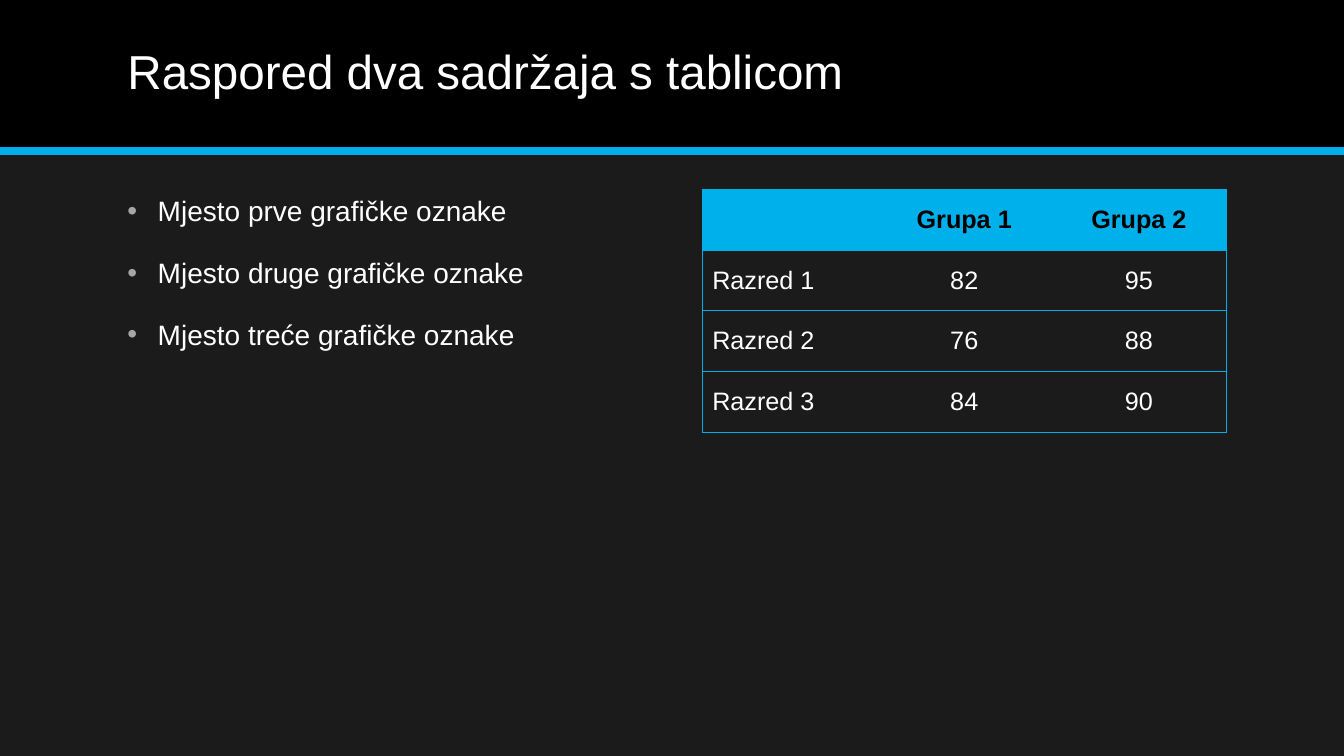
"""Build a dark two-content slide with a bullet list and a table of class results."""
from lxml.etree import SubElement
from pptx import Presentation
from pptx.dml.color import RGBColor
from pptx.enum.shapes import MSO_CONNECTOR, MSO_SHAPE
from pptx.enum.text import MSO_ANCHOR, PP_ALIGN
from pptx.oxml.ns import qn
from pptx.util import Pt

COLORS = {"background": "1B1B1B", "band": "000000", "accent": "00B0EA",
          "text": "FFFFFF", "header": "000000", "bullet": "A6A6A6"}
BULLETS = ["Mjesto prve grafičke oznake", "Mjesto druge grafičke oznake",
           "Mjesto treće grafičke oznake"]
ROWS = [["", "Grupa 1", "Grupa 2"],
        ["Razred 1", "82", "95"],
        ["Razred 2", "76", "88"],
        ["Razred 3", "84", "90"]]


def color(name):
    return RGBColor.from_string(COLORS[name])


def write(paragraph, text, size, color_name, bold=False):
    run = paragraph.add_run()
    run.text = text
    for attribute, value in {"name": "Arial", "size": Pt(size), "bold": bold}.items():
        setattr(run.font, attribute, value)
    run.font.color.rgb = color(color_name)


presentation = Presentation()
presentation.slide_width, presentation.slide_height = Pt(960), Pt(540)
slide = presentation.slides.add_slide(presentation.slide_layouts[6])
slide.background.fill.solid()
slide.background.fill.fore_color.rgb = color("background")

band = slide.shapes.add_shape(MSO_SHAPE.RECTANGLE, 0, 0, Pt(960), Pt(108))
band.shadow.inherit = False
band.fill.solid()
band.fill.fore_color.rgb = color("band")
band.line.fill.background()

rule = slide.shapes.add_connector(MSO_CONNECTOR.STRAIGHT, 0, Pt(108), Pt(960), Pt(108))
rule.line.color.rgb = color("accent")
rule.line.width = Pt(6)
SubElement(rule.element.spPr, qn("a:effectLst"))

title = slide.shapes.add_textbox(Pt(84), Pt(10), Pt(792), Pt(86.4)).text_frame
title.word_wrap = True
title.vertical_anchor = MSO_ANCHOR.MIDDLE
title.paragraphs[0].line_spacing = 0.9
write(title.paragraphs[0], "Raspored dva sadržaja s tablicom", 34, "text")

body = slide.shapes.add_textbox(Pt(84), Pt(135), Pt(374.4), Pt(351)).text_frame
body.word_wrap = True
for index, text in enumerate(BULLETS):
    paragraph = body.add_paragraph() if index else body.paragraphs[0]
    paragraph.space_before = Pt(20)
    write(paragraph, text, 20, "text")
    properties = paragraph._p.get_or_add_pPr()
    properties.set("marL", str(Pt(21.6)))
    properties.set("indent", str(-Pt(21.6)))
    bullet_color = SubElement(properties, qn("a:buClr"))
    SubElement(bullet_color, qn("a:srgbClr"), val=COLORS["bullet"])
    SubElement(properties, qn("a:buFont"), typeface="Arial")
    SubElement(properties, qn("a:buChar"), char="•")

table = slide.shapes.add_table(len(ROWS), 3, Pt(501.6), Pt(135),
                               Pt(374.4), Pt(174)).table
table.horz_banding = False
for column in table.columns:
    column.width = Pt(124.8)
for row in table.rows:
    row.height = Pt(43.5)

for row_index, values in enumerate(ROWS):
    is_header = row_index == 0
    for column_index, value in enumerate(values):
        cell = table.cell(row_index, column_index)
        cell.vertical_anchor = MSO_ANCHOR.MIDDLE
        paragraph = cell.text_frame.paragraphs[0]
        paragraph.alignment = PP_ALIGN.CENTER if column_index else PP_ALIGN.LEFT
        if value:
            write(paragraph, value, 18, "header" if is_header else "text", is_header)
        borders = {"lnL": column_index == 0, "lnR": column_index == 2,
                   "lnT": True, "lnB": True}
        for side, visible in borders.items():
            border = SubElement(cell._tc.get_or_add_tcPr(), qn(f"a:{side}"), w=str(Pt(0.5)))
            if visible:
                border_fill = SubElement(border, qn("a:solidFill"))
                SubElement(border_fill, qn("a:srgbClr"), val=COLORS["accent"])
            else:
                SubElement(border, qn("a:noFill"))
        if is_header:
            cell.fill.solid()
            cell.fill.fore_color.rgb = color("accent")
        else:
            cell.fill.background()

presentation.save("out.pptx")
